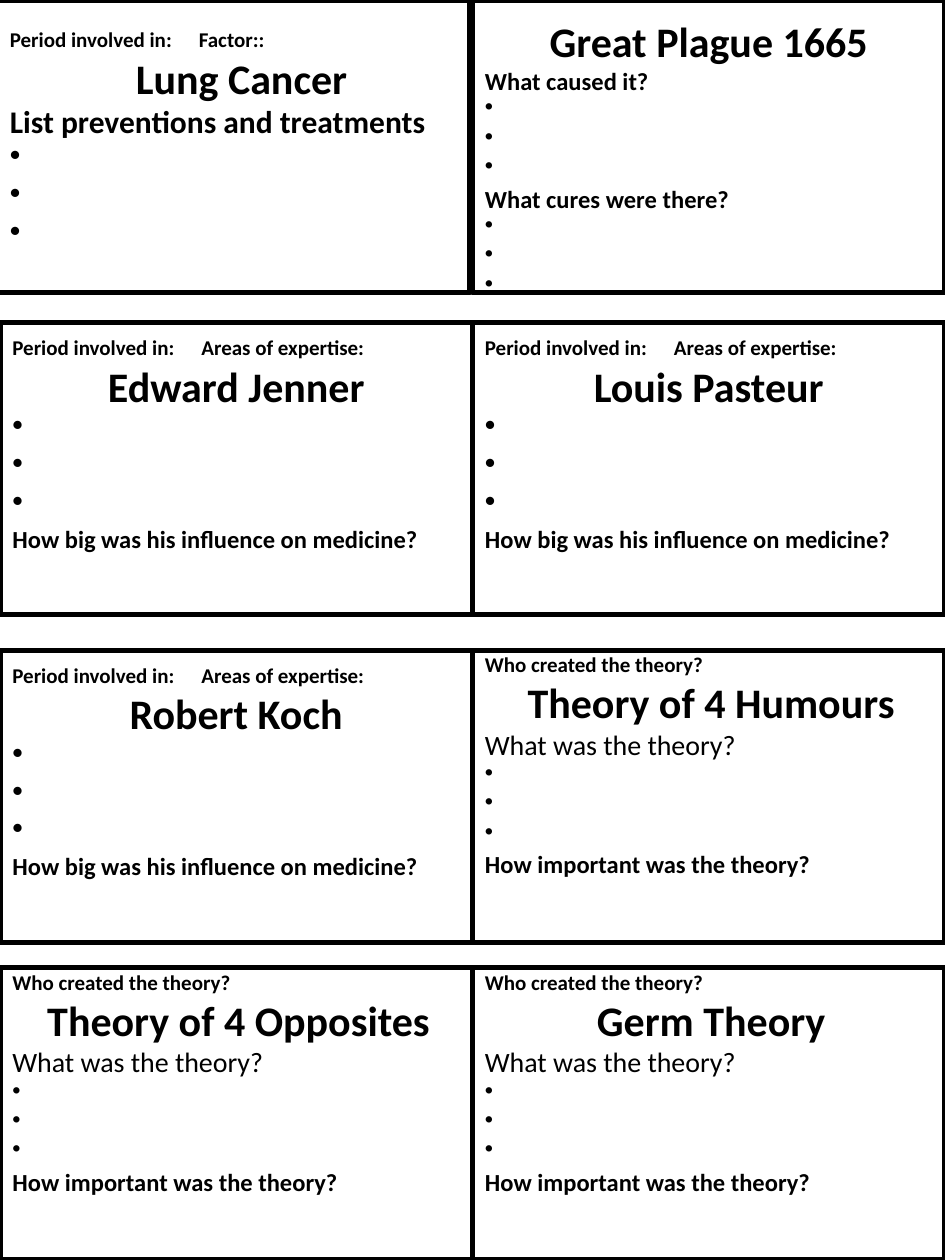
from lxml.etree import SubElement
from pptx import Presentation
from pptx.dml.color import RGBColor
from pptx.enum.shapes import MSO_SHAPE
from pptx.enum.text import MSO_ANCHOR, PP_ALIGN
from pptx.oxml.ns import qn
from pptx.util import Pt

COLOURS = {"paper": "FFFFFF", "ink": "000000"}
CARD_WIDTH, CARD_HEIGHT = 270, 167
ROW_TOPS = [0, 184.3, 371.5, 553]
TAB_STOP = 133


class CardSheet:
    """Holds the style and the current slide of revision cards."""

    frame_format = {
        "word_wrap": True,
        "vertical_anchor": MSO_ANCHOR.TOP,
        "margin_left": Pt(7.2),
        "margin_right": Pt(7.2),
        "margin_bottom": Pt(0),
    }

    def __init__(self, page):
        self.page = page

    def colour(self, name):
        return RGBColor.from_string(COLOURS[name])

    def card(self, left, top, inset, lines):
        box = self.page.shapes.add_shape(
            MSO_SHAPE.RECTANGLE, Pt(left), Pt(top), Pt(CARD_WIDTH), Pt(CARD_HEIGHT)
        )
        box.shadow.inherit = False
        box.fill.solid()
        box.fill.fore_color.rgb = self.colour("paper")
        box.line.color.rgb = self.colour("ink")
        box.line.width = Pt(3)
        frame = box.text_frame
        for name, value in {**self.frame_format, "margin_top": Pt(inset)}.items():
            setattr(frame, name, value)
        for index, line in enumerate(lines):
            para = frame.add_paragraph() if index else frame.paragraphs[0]
            self.line(para, **line)

    def line(self, para, text, size, bold=True, align=PP_ALIGN.LEFT, indent=0, bullet=False):
        para.alignment = align
        properties = para._p.get_or_add_pPr()
        properties.set("marL", str(int(Pt(indent))))
        properties.set("indent", "0")
        if bullet:
            tint = SubElement(properties, qn("a:buClr"))
            SubElement(tint, qn("a:srgbClr"), val=COLOURS["ink"])
            SubElement(properties, qn("a:buChar"), char="•")
        if "\t" in text:
            stops = SubElement(properties, qn("a:tabLst"))
            SubElement(stops, qn("a:tab"), pos=str(int(Pt(TAB_STOP))), algn="l")
        span = para.add_run()
        span.text = text
        span.font.color.rgb = self.colour("ink")
        for name, value in {"name": "Calibri", "size": Pt(size), "bold": bold}.items():
            setattr(span.font, name, value)


def label(text, size, bold=True):
    return {"text": text, "size": size, "bold": bold}


def title(text, align=PP_ALIGN.CENTER, indent=0):
    return {"text": text, "size": 24, "align": align, "indent": indent}


def bullets(size):
    return [{"text": " ", "size": size, "bullet": True}] * 3


def person(name):
    return 7, [
        label("Period involved in:\tAreas of expertise:", 12),
        title(name),
        *bullets(18),
        label("How big was his influence on medicine?", 14),
    ]


def theory(name):
    return 0.9, [
        label("Who created the theory?", 12),
        title(name, indent=2.7),
        label("What was the theory?", 16, False),
        *bullets(14),
        label("How important was the theory?", 14),
    ]


def main():
    deck = Presentation()
    deck.slide_width, deck.slide_height = Pt(540), Pt(720)
    sheet = CardSheet(deck.slides.add_slide(deck.slide_layouts[6]))
    cancer = 15.3, [
        label("Period involved in:\tFactor::", 12),
        title("Lung Cancer", PP_ALIGN.LEFT, 72),
        label("List preventions and treatments", 18),
        *bullets(18),
    ]
    plague = 8.9, [
        title("Great Plague 1665"),
        label("What caused it?", 14),
        *bullets(14),
        label("What cures were there?", 14),
        *bullets(14),
    ]
    cards = [
        cancer, plague,
        person("Edward Jenner"), person("Louis Pasteur"),
        person("Robert Koch"), theory("Theory of 4 Humours"),
        theory("Theory of 4 Opposites"), theory("Germ Theory"),
    ]
    for index, (inset, lines) in enumerate(cards):
        row, column = divmod(index, 2)
        left = column * CARD_WIDTH if index else -1.44
        sheet.card(left, ROW_TOPS[row], inset, lines)
    deck.save("out.pptx")


if __name__ == "__main__":
    main()
